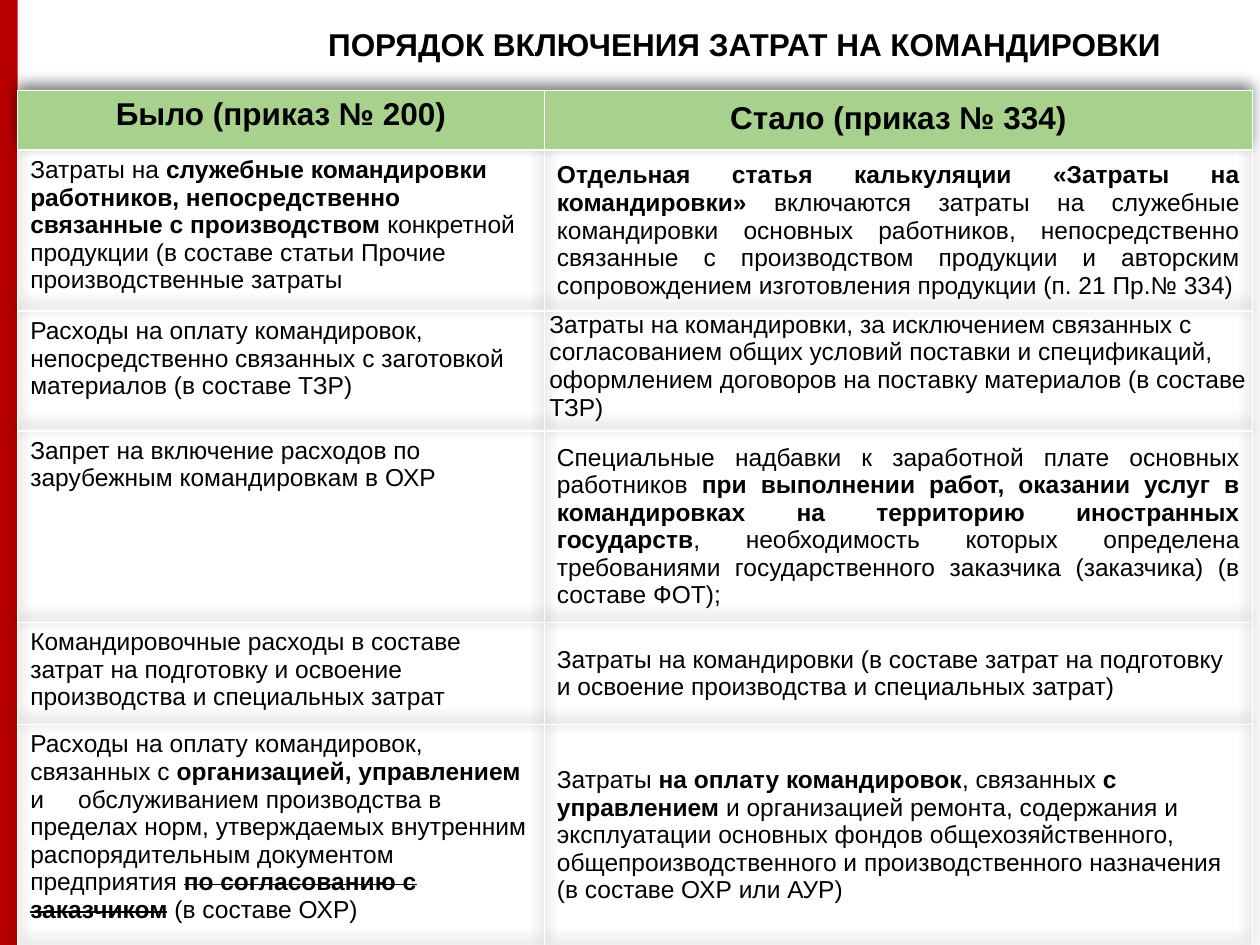
from dataclasses import dataclass
from pptx import Presentation
from pptx.dml.color import RGBColor
from pptx.enum.shapes import MSO_SHAPE
from pptx.enum.text import MSO_ANCHOR as Anchor, MSO_AUTO_SIZE as AutoSize, PP_ALIGN as Align
from pptx.oxml import parse_xml
from pptx.oxml.ns import nsdecls
from pptx.util import Inches, Pt


@dataclass(frozen=True)
class Theme:
    font: str = "Arial"
    heading_size: int = 18
    body_size: int = 14
    text: str = "000000"
    accent: str = "B80000"
    header: str = "A9D18E"
    border: str = "FFFFFF"
    border_width: int = 1


THEME = Theme()
BOLD = {"bold": True}
STRUCK = {"bold": True, "strike": True}

TITLE = "ПОРЯДОК ВКЛЮЧЕНИЯ ЗАТРАТ НА КОМАНДИРОВКИ"
HEADERS = ["Было (приказ № 200)", "Стало (приказ № 334)"]
ROWS = [
    (
        [("Затраты на ", {}),
         ("служебные командировки работников, непосредственно связанные с производством ", BOLD),
         ("конкретной продукции (в составе статьи Прочие производственные затраты", {})],
        [("Отдельная статья калькуляции «Затраты на командировки»", BOLD),
         (" включаются затраты на служебные командировки основных работников, непосредственно "
          "связанные с производством продукции и авторским сопровождением изготовления "
          "продукции (п. 21 Пр.№ 334)", {})],
        {"align": Align.JUSTIFY},
    ),
    (
        [("Расходы на оплату командировок, непосредственно связанных с заготовкой "
          "материалов (в составе ТЗР)", {})],
        [("Затраты на командировки, за исключением связанных с согласованием общих условий "
          "поставки и спецификаций, оформлением договоров на поставку материалов "
          "(в составе ТЗР)", {})],
        {"anchor": Anchor.TOP, "margins": (0.01, 0), "indent": 0.03},
    ),
    (
        [("Запрет на включение расходов по зарубежным командировкам в ОХР", {})],
        [("Специальные надбавки к заработной плате основных работников ", {}),
         ("при выполнении работ, оказании услуг в командировках на территорию "
          "иностранных государств", BOLD),
         (", необходимость которых определена требованиями государственного заказчика "
          "(заказчика) (в составе ФОТ);", {})],
        {"align": Align.JUSTIFY},
    ),
    (
        [("Командировочные расходы в составе затрат на подготовку и освоение производства "
          "и специальных затрат", {})],
        [("Затраты на командировки (в составе затрат на подготовку и освоение производства "
          "и специальных затрат)", {})],
        {},
    ),
    (
        [("Расходы на оплату командировок, связанных с ", {}),
         ("организацией, управлением ", BOLD),
         ("и\tобслуживанием производства в пределах норм, утверждаемых внутренним "
          "распорядительным документом предприятия ", {}),
         ("по согласованию с заказчиком", STRUCK),
         (" (в составе ОХР)", {})],
        [("Затраты ", {}),
         ("на оплату командировок", BOLD),
         (", связанных ", {}),
         ("с управлением ", BOLD),
         ("и организацией ремонта, содержания и эксплуатации основных фондов "
          "общехозяйственного, общепроизводственного и производственного назначения "
          "(в составе ОХР или АУР)", {})],
        {},
    ),
]
COLUMN_WIDTHS = [4.18, 5.62]
ROW_HEIGHTS = [0.47, 1.28, 0.95, 1.52, 0.81, 1.76]
TAB_STOP = 0.38


def write_text(frame, runs, size=THEME.body_size, align=Align.LEFT, line=None, indent=0):
    paragraph = frame.paragraphs[0]
    paragraph.alignment = align
    if line:
        paragraph.line_spacing = Pt(line)
    properties = paragraph._p.get_or_add_pPr()
    if indent:
        properties.set("marL", str(Inches(indent)))
    if any("\t" in text for text, _ in runs):
        properties.append(parse_xml(
            f'<a:tabLst {nsdecls("a")}><a:tab pos="{Inches(TAB_STOP)}" algn="l"/></a:tabLst>'))
    for text, style in runs:
        run = paragraph.add_run()
        run.text = text
        run.font.name = THEME.font
        run.font.size = Pt(size)
        run.font.bold = style.get("bold", False)
        run.font.color.rgb = RGBColor.from_string(THEME.text)
        if style.get("strike"):
            run._r.get_or_add_rPr().set("strike", "sngStrike")


def set_borders(cell):
    for index, side in enumerate(("lnL", "lnR", "lnT", "lnB")):
        cell._tc.get_or_add_tcPr().insert(index, parse_xml(
            f'<a:{side} {nsdecls("a")} w="{Pt(THEME.border_width)}"><a:solidFill>'
            f'<a:srgbClr val="{THEME.border}"/></a:solidFill></a:{side}>'))


def fill_cell(cell, runs, fill=None, anchor=Anchor.TOP, margins=(0.1, 0.05), **text_format):
    cell.vertical_anchor = anchor
    cell.margin_left = cell.margin_right = Inches(margins[0])
    cell.margin_top = cell.margin_bottom = Inches(margins[1])
    if fill:
        cell.fill.solid()
        cell.fill.fore_color.rgb = RGBColor.from_string(fill)
    else:
        cell.fill.background()
    set_borders(cell)
    write_text(cell.text_frame, runs, **text_format)


def add_side_bar(slide):
    bar = slide.shapes.add_shape(
        MSO_SHAPE.RECTANGLE, Inches(-0.01), 0, Inches(0.15), Inches(7.5))
    bar.shadow.inherit = False
    bar.fill.solid()
    bar.fill.fore_color.rgb = RGBColor.from_string(THEME.accent)
    bar.line.fill.background()


def add_title(slide):
    box = slide.shapes.add_textbox(Inches(1.05), Inches(0.15), Inches(9.72), Inches(0.4))
    box.text_frame.word_wrap = True
    box.text_frame.auto_size = AutoSize.SHAPE_TO_FIT_TEXT
    write_text(box.text_frame, [(TITLE, BOLD)], size=THEME.heading_size, align=Align.CENTER)


def add_comparison(slide):
    table = slide.shapes.add_table(
        len(ROW_HEIGHTS), len(COLUMN_WIDTHS), Inches(0.14), Inches(0.72),
        Inches(sum(COLUMN_WIDTHS)), Inches(sum(ROW_HEIGHTS))).table
    table.first_row = table.horz_banding = False
    table._tbl.tblPr.insert(0, parse_xml(
        f'<a:effectLst {nsdecls("a")}><a:outerShdw blurRad="{Pt(8)}" dist="{Pt(3)}" '
        'dir="16200000" rotWithShape="0"><a:srgbClr val="000000"><a:alpha val="50000"/>'
        '</a:srgbClr></a:outerShdw></a:effectLst>'))
    for column, width in zip(table.columns, COLUMN_WIDTHS):
        column.width = Inches(width)
    for row, height in zip(table.rows, ROW_HEIGHTS):
        row.height = Inches(height)
    header_formats = [{}, {"anchor": Anchor.MIDDLE, "line": 18}]
    for index, (text, extra) in enumerate(zip(HEADERS, header_formats)):
        fill_cell(table.cell(0, index), [(text, BOLD)], fill=THEME.header,
                  size=THEME.heading_size, align=Align.CENTER, **extra)
    for index, (before, after, after_format) in enumerate(ROWS, start=1):
        fill_cell(table.cell(index, 0), before)
        fill_cell(table.cell(index, 1), after, **{"anchor": Anchor.MIDDLE, **after_format})


def main():
    presentation = Presentation()
    presentation.slide_width = Inches(10)
    presentation.slide_height = Inches(7.5)
    slide = presentation.slides.add_slide(presentation.slide_layouts[6])
    add_side_bar(slide)
    add_title(slide)
    add_comparison(slide)
    presentation.save("out.pptx")


if __name__ == "__main__":
    main()
